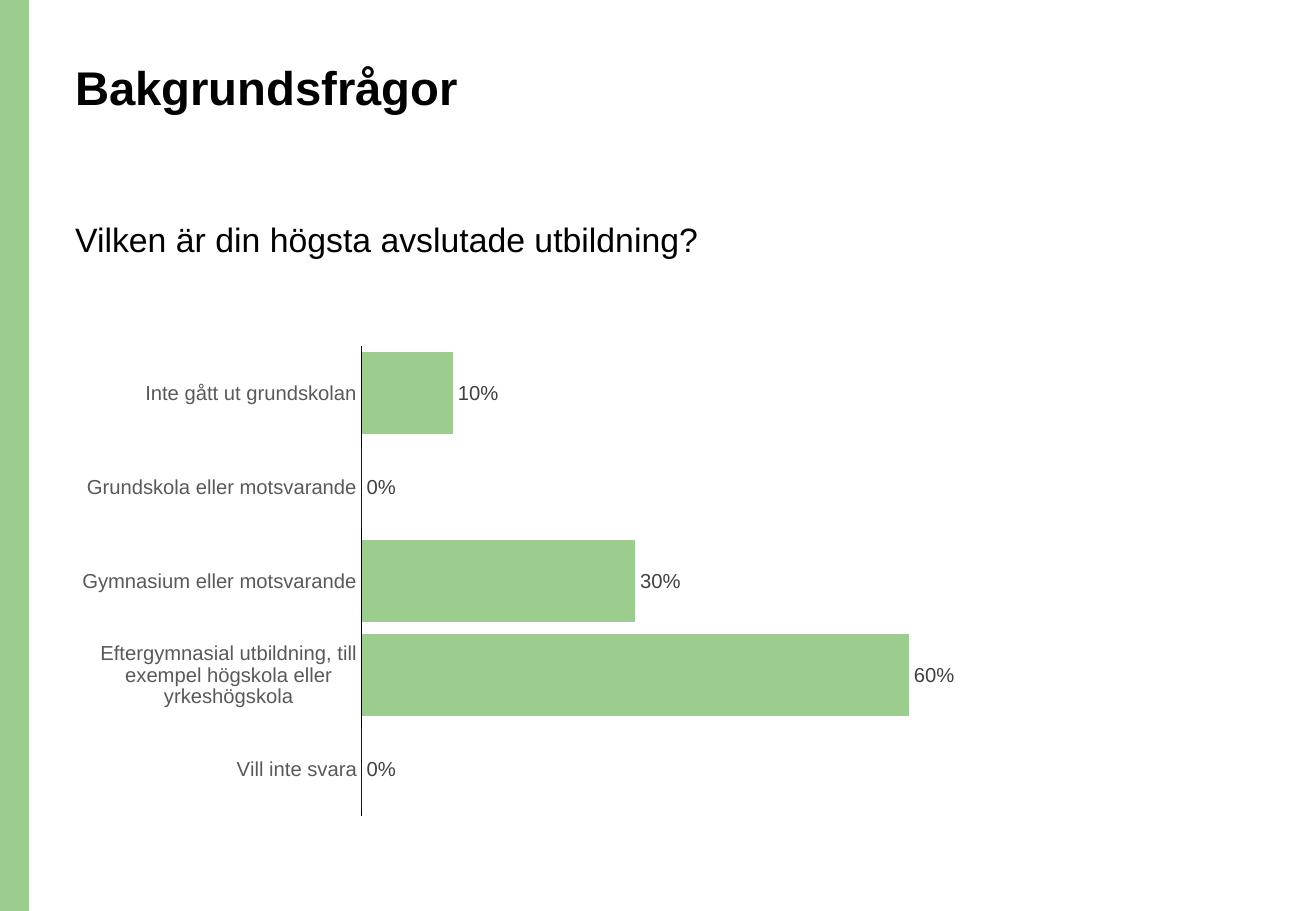
from pptx import Presentation
from pptx.chart.data import CategoryChartData
from pptx.dml.color import RGBColor
from pptx.enum.chart import XL_CHART_TYPE, XL_LABEL_POSITION, XL_TICK_MARK
from pptx.enum.shapes import MSO_SHAPE
from pptx.enum.text import MSO_ANCHOR
from pptx.util import Inches, Pt

GREEN, BLACK, GREY, DARK = "9DCC8F", "000000", "595959", "404040"


def rgb(value):
    return RGBColor.from_string(value)


def set_font(font, color, **values):
    font.color.rgb = rgb(color)
    for name, value in {"name": "Arial", **values}.items():
        setattr(font, name, value)


prs = Presentation()
prs.slide_width, prs.slide_height = Inches(10.83), Inches(7.5)
s = prs.slides.add_slide(prs.slide_layouts[6])
left = Inches(0.52)

# Green band along the left edge
sp = s.shapes.add_shape(MSO_SHAPE.RECTANGLE, 0, 0, Inches(0.24), prs.slide_height)
sp.shadow.inherit = False
sp.fill.solid()
sp.fill.fore_color.rgb = rgb(GREEN)
sp.line.fill.background()

# Title and question
for text, top, width, height, size, bold in [
    ("Bakgrundsfrågor", 0.48, 9.34, 1.02, 28, True),
    ("Vilken är din högsta avslutade utbildning?", 1.79, 6.03, 0.74, 20, False),
]:
    tf = s.shapes.add_textbox(left, Inches(top), Inches(width), Inches(height)).text_frame
    tf.word_wrap = True
    tf.vertical_anchor = MSO_ANCHOR.TOP
    p = tf.paragraphs[0]
    p.line_spacing = 0.9
    r = p.add_run()
    r.text = text
    set_font(r.font, BLACK, size=Pt(size), bold=bold)

# Bar chart of the answers
answers = {
    "Inte gått ut grundskolan": 0.1,
    "Grundskola eller motsvarande": 0,
    "Gymnasium eller motsvarande": 0.3,
    "Eftergymnasial utbildning, till exempel högskola eller yrkeshögskola": 0.6,
    "Vill inte svara": 0,
}
data = CategoryChartData(number_format="0%")
data.categories = list(answers)
data.add_series("Series 1", list(answers.values()))
chart = s.shapes.add_chart(
    XL_CHART_TYPE.BAR_CLUSTERED, left, Inches(2.77), Inches(7.87), Inches(4.03), data
).chart
chart.has_legend = chart.has_title = False
set_font(chart.font, BLACK, size=Pt(10))

# Bars and their value labels
plot = chart.plots[0]
plot.gap_width = 15
plot.vary_by_categories = False
bars = plot.series[0]
bars.invert_if_negative = False
bars.format.fill.solid()
bars.format.fill.fore_color.rgb = rgb(GREEN)
labels = bars.data_labels
for name, value in {
    "show_value": True,
    "number_format": "0%",
    "number_format_is_linked": False,
    "position": XL_LABEL_POSITION.OUTSIDE_END,
}.items():
    setattr(labels, name, value)
set_font(labels.font, DARK, size=Pt(12))

# Axes
axis = chart.category_axis
axis.reverse_order = True
axis.major_tick_mark = axis.minor_tick_mark = XL_TICK_MARK.NONE
axis.format.line.color.rgb = rgb(BLACK)
axis.format.line.width = Pt(0.75)
set_font(axis.tick_labels.font, GREY, size=Pt(12))
scale = chart.value_axis
scale.minimum_scale, scale.maximum_scale = 0, 0.7
scale.has_major_gridlines = False
scale.visible = False

prs.save("out.pptx")
